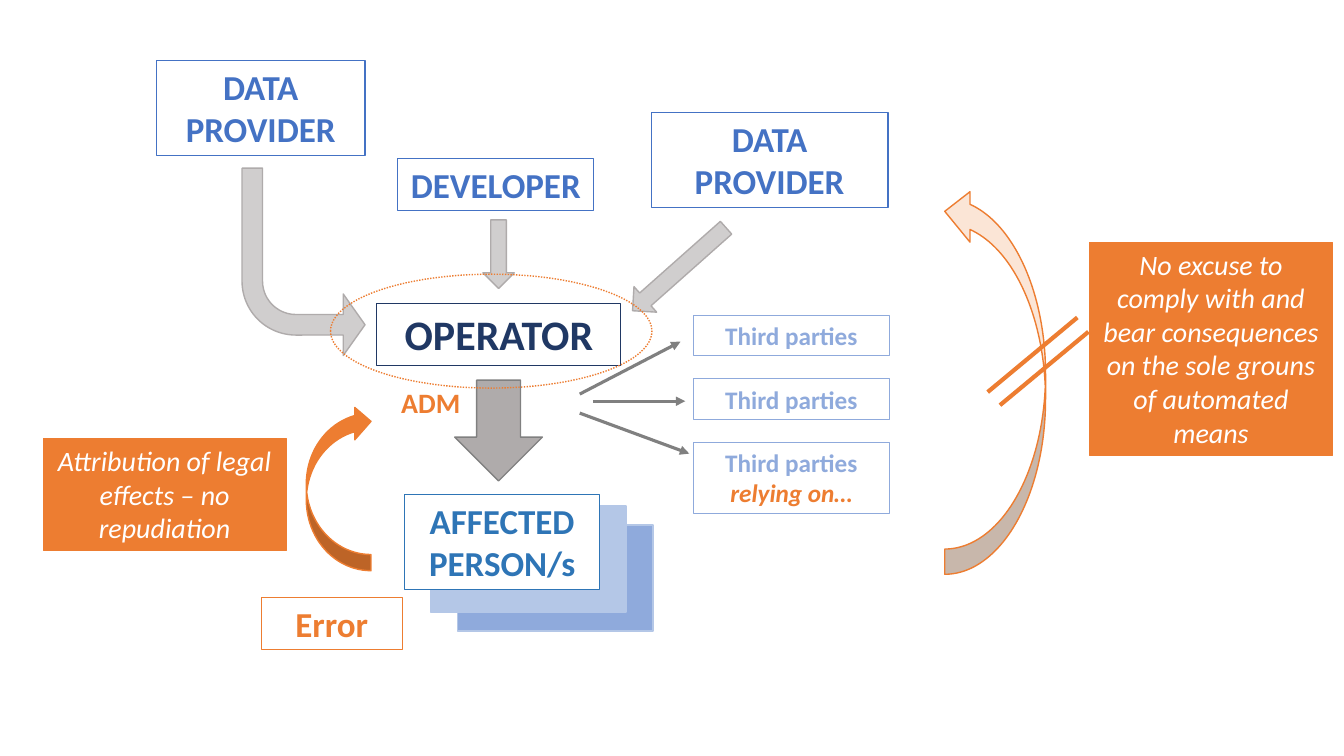
import pptx
import pptx.util
import pptx.dml.color
import pptx.enum.dml
import pptx.enum.shapes
import pptx.enum.text
import pptx.oxml.ns
from dataclasses import dataclass
from lxml import etree

Cm, Pt = pptx.util.Cm, pptx.util.Pt
Kind = pptx.enum.shapes.MSO_SHAPE


@dataclass(frozen=True)
class Theme:
    font: str = "Calibri"
    white: str = "FFFFFF"
    navy: str = "203864"
    blue: str = "4472C4"
    teal: str = "2E75B6"
    soft_blue: str = "8FAADC"
    pale_blue: str = "B4C7E7"
    orange: str = "ED7D31"
    pale_orange: str = "FBE5D6"
    dark_gray: str = "808080"
    gray: str = "AFABAB"
    pale_gray: str = "D0CECE"
    operator_size: float = 30
    role_size: float = 25
    note_size: float = 20
    party_size: float = 18
    box_line: float = 0.75
    shape_line: float = 1
    arrow_line: float = 2.25
    slash_line: float = 3


THEME = Theme()

# All places are (left, top, width, height) in centimetres.
OPERATOR = ("OPERATOR", (9.5, 7.65, 6.15, 1.55))
ROLES = [
    ("DATA PROVIDER", (3.94, 1.52, 5.26, 2.39)),
    ("DEVELOPER", (10.03, 3.99, 4.93, 1.32)),
    ("DATA PROVIDER", (16.41, 2.84, 5.97, 2.39)),
]
AFFECTED = ("AFFECTED PERSON/s", (10.19, 12.47, 4.93, 2.39))
CARD_SIZE = (4.93, 2.67)
CARDS = [(11.53, 13.23, THEME.soft_blue), (10.85, 12.75, THEME.pale_blue)]
ADM = ("ADM", (9.47, 9.58, 2.77, 1.12))
ERROR = ("Error", (6.58, 15.06, 3.56, 1.32))
NOTES = [
    ("Attribution of legal effects – no repudiation", (1.09, 11.05, 6.12, 2.82)),
    ("No excuse to comply with and bear consequences on the sole grouns "
     "of automated means", (27.46, 6.1, 6.12, 5.38)),
]
PARTIES = [("Third parties",), ("Third parties",), ("Third parties", "relying on…")]
PARTY_LEFT, PARTY_TOP, PARTY_WIDTH, PARTY_STEP = 17.48, 7.95, 4.93, 1.6
PARTY_LINE, PARTY_PADDING = 0.77, 0.25

PARTY_ARROWS = [
    ((14.61, 9.93), (17.15, 8.61)),
    ((14.61, 10.41), (17.37, 11.43)),
    ((14.94, 10.11), (17.27, 10.11)),
]
SLASHES = [((25.2, 10.21), (27.43, 8.36)), ((24.89, 9.88), (27.15, 8.0))]

DECISION_ARROW = (11.46, 9.58, 2.21, 2.54)
DEVELOPER_ARROW = (12.17, 5.54, 0.79, 1.73)
RIGHT_DATA_ARROW = (16.69, 5.21, 0.86, 3.15)
LEFT_DATA_ARROW = (6.1, 4.24, 3.1, 4.72)
BEND = (0.167, 0.25, 0.177, 0.438)
ATTRIBUTION_ARROW = (6.45, 11.48, 4.17, 1.63)
EXCUSE_ARROW = (20.19, 8.31, 9.78, 2.54)
OPERATOR_HALO = (8.33, 6.91, 8.1, 2.87)


def color(code):
    return pptx.dml.color.RGBColor.from_string(code)


def paint(shape, fill, line, width):
    if fill:
        shape.fill.solid()
        shape.fill.fore_color.rgb = color(fill)
    else:
        shape.fill.background()
    if line:
        shape.line.color.rgb = color(line)
        shape.line.width = Pt(width)


def add_box(slide, place, lines, size, line=None, fill=None):
    """Add a centred text box; each line is (text, colour, bold, italic)."""
    box = slide.shapes.add_textbox(*map(Cm, place))
    paint(box, fill, line, THEME.box_line)
    frame = box.text_frame
    frame.word_wrap = True
    frame.auto_size = pptx.enum.text.MSO_AUTO_SIZE.SHAPE_TO_FIT_TEXT
    for index, (text, ink, bold, italic) in enumerate(lines):
        para = frame.add_paragraph() if index else frame.paragraphs[0]
        para.alignment = pptx.enum.text.PP_ALIGN.CENTER
        span = para.add_run()
        span.text = text
        span.font.name = THEME.font
        span.font.size = Pt(size)
        span.font.bold = bold
        span.font.italic = italic
        span.font.color.rgb = color(ink)


def add_label(slide, label, size, ink, line=None, fill=None):
    text, place = label
    add_box(slide, place, [(text, ink, True, False)], size, line, fill)


def add_figure(slide, kind, place, fill, line, rotation=0):
    shape = slide.shapes.add_shape(kind, *map(Cm, place))
    shape.shadow.inherit = False
    shape.rotation = rotation
    paint(shape, fill, line, THEME.shape_line)
    return shape


def add_line(slide, ends, ink, width, arrow=False):
    start, end = ends
    line = slide.shapes.add_connector(
        pptx.enum.shapes.MSO_CONNECTOR.STRAIGHT, *map(Cm, start + end))
    line.line.color.rgb = color(ink)
    line.line.width = Pt(width)
    qn = pptx.oxml.ns.qn
    if arrow:
        etree.SubElement(line.line._get_or_add_ln(), qn("a:tailEnd"), type="triangle")
    etree.SubElement(line._element.spPr, qn("a:effectLst"))


def add_parties(slide):
    inks = [(THEME.soft_blue, True, False), (THEME.orange, True, True)]
    for row, texts in enumerate(PARTIES):
        place = (PARTY_LEFT, PARTY_TOP + row * PARTY_STEP, PARTY_WIDTH,
                 PARTY_PADDING + PARTY_LINE * len(texts))
        lines = [(text, *ink) for text, ink in zip(texts, inks)]
        add_box(slide, place, lines, THEME.party_size, THEME.soft_blue)


def add_note(slide, note):
    text, place = note
    add_box(slide, place, [(text, THEME.white, False, True)],
            THEME.note_size, THEME.orange, THEME.orange)


def main():
    deck = pptx.Presentation()
    deck.slide_width, deck.slide_height = Cm(33.87), Cm(19.05)
    page = deck.slides.add_slide(deck.slide_layouts[6])

    add_label(page, OPERATOR, THEME.operator_size, THEME.navy, THEME.navy)
    for left, top, fill in CARDS:
        add_figure(page, Kind.RECTANGLE, (left, top, *CARD_SIZE), fill, THEME.pale_blue)
    add_label(page, AFFECTED, THEME.role_size, THEME.teal, THEME.teal, THEME.white)
    add_figure(page, Kind.DOWN_ARROW, DECISION_ARROW, THEME.gray, THEME.dark_gray)
    add_label(page, ADM, THEME.note_size, THEME.orange)

    for ends in PARTY_ARROWS:
        add_line(page, ends, THEME.dark_gray, THEME.arrow_line, arrow=True)
    add_parties(page)
    for role in ROLES:
        add_label(page, role, THEME.role_size, THEME.blue, THEME.blue)

    bent = add_figure(page, Kind.BENT_ARROW, LEFT_DATA_ARROW, THEME.pale_gray, THEME.gray)
    bent._element.spPr.xfrm.set("flipV", "1")
    for index, value in enumerate(BEND):
        bent.adjustments[index] = value
    add_figure(page, Kind.DOWN_ARROW, DEVELOPER_ARROW, THEME.pale_gray, THEME.gray)
    add_figure(page, Kind.DOWN_ARROW, RIGHT_DATA_ARROW, THEME.pale_gray, THEME.gray, 48.4)

    add_figure(page, Kind.CURVED_DOWN_ARROW, ATTRIBUTION_ARROW,
               THEME.orange, THEME.orange, 270)
    halo = add_figure(page, Kind.OVAL, OPERATOR_HALO, None, THEME.orange)
    halo.line.dash_style = pptx.enum.dml.MSO_LINE.ROUND_DOT
    attribution, excuse = NOTES
    add_note(page, attribution)
    add_figure(page, Kind.CURVED_UP_ARROW, EXCUSE_ARROW,
               THEME.pale_orange, THEME.orange, 270)
    for ends in SLASHES:
        add_line(page, ends, THEME.orange, THEME.slash_line)
    add_note(page, excuse)
    add_label(page, ERROR, THEME.role_size, THEME.orange, THEME.orange)

    deck.save("out.pptx")


if __name__ == "__main__":
    main()
